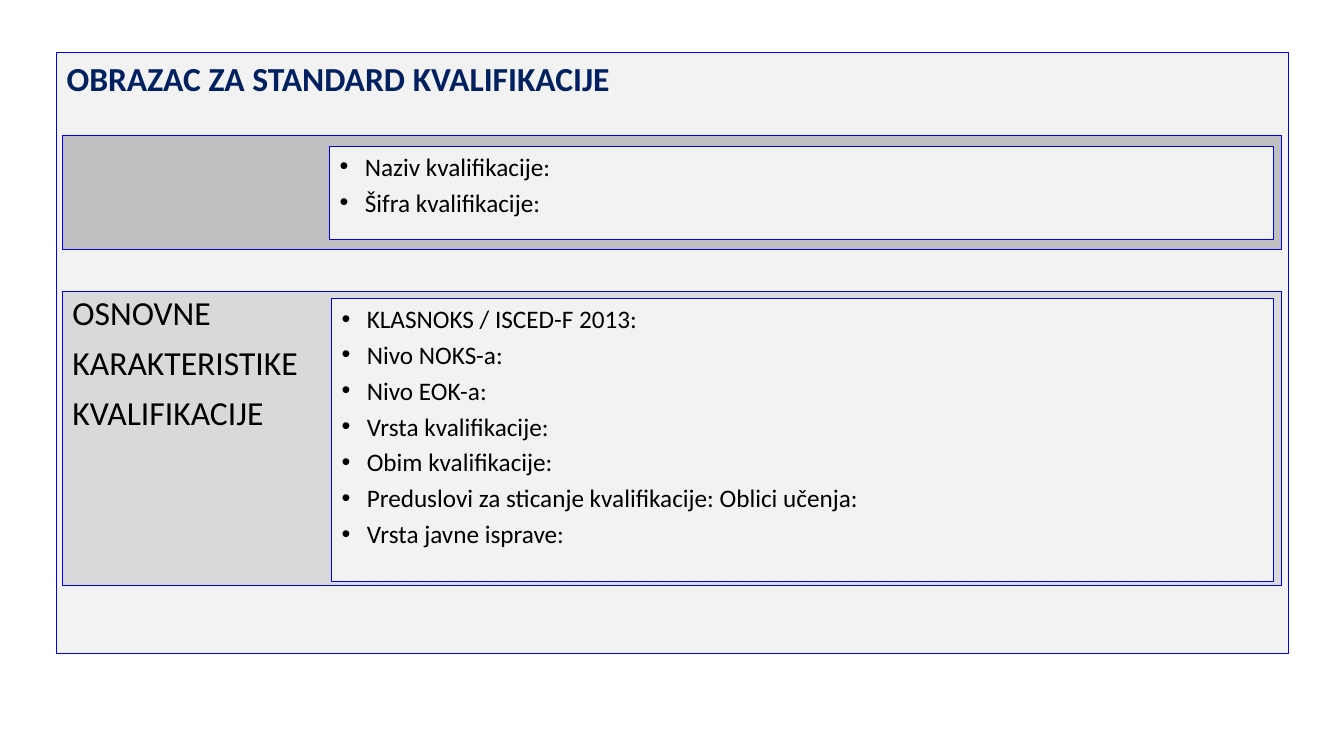
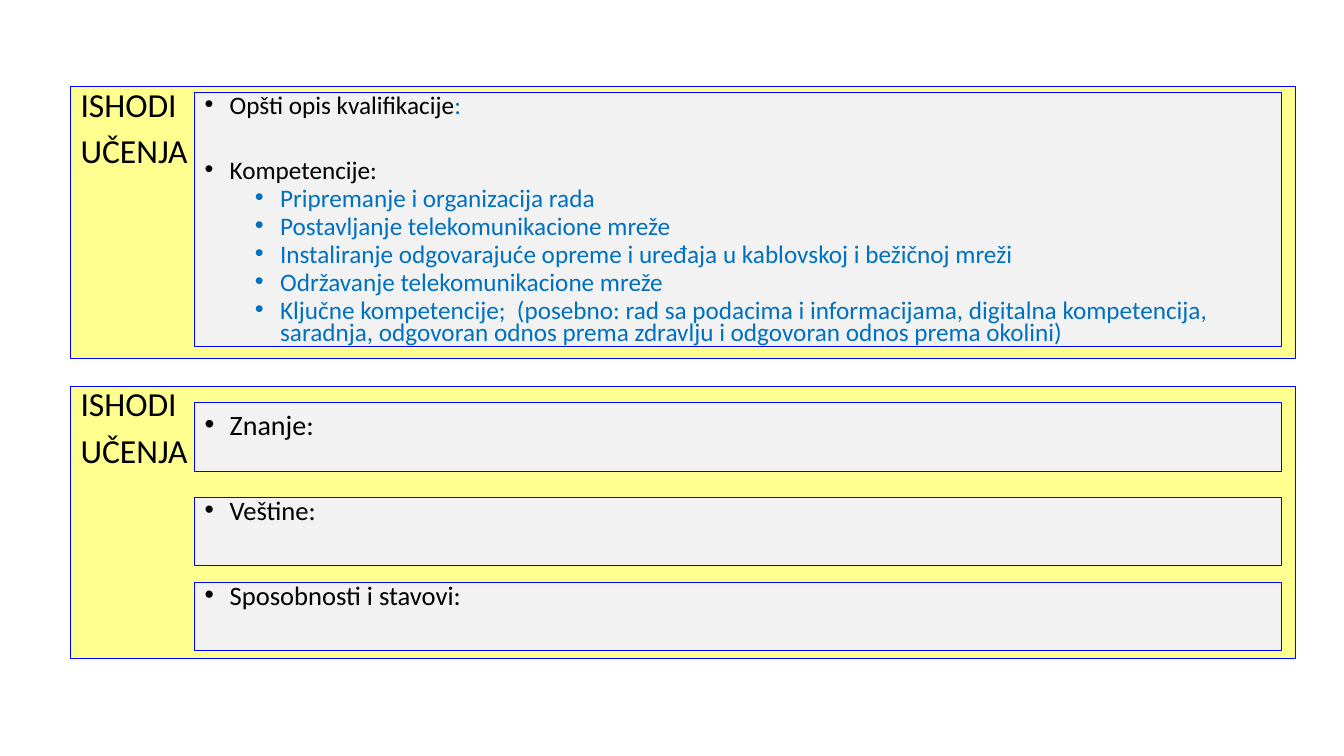
from dataclasses import dataclass
from lxml.etree import SubElement
from pptx import Presentation
from pptx.dml.color import RGBColor as RGB
from pptx.enum.shapes import MSO_SHAPE
from pptx.enum.text import MSO_ANCHOR, MSO_AUTO_SIZE, PP_ALIGN
from pptx.oxml.ns import qn
from pptx.util import Inches, Pt


@dataclass(frozen=True)
class Theme:
    font: str = "Calibri"
    heading: Pt = Pt(24)
    body: Pt = Pt(18)
    knowledge: Pt = Pt(20)
    skill: Pt = Pt(19)
    border_width: Pt = Pt(0.75)
    border: RGB = RGB(0x00, 0x00, 0xFF)
    title: RGB = RGB(0x00, 0x20, 0x60)
    text: RGB = RGB(0x00, 0x00, 0x00)
    answer: RGB = RGB(0x00, 0x70, 0xC0)
    paper: RGB = RGB(0xF2, 0xF2, 0xF2)
    name_band: RGB = RGB(0xBF, 0xBF, 0xBF)
    features_band: RGB = RGB(0xD9, 0xD9, 0xD9)
    outcomes_band: RGB = RGB(0xFF, 0xFF, 0x00)


theme = Theme()


def place_panel(slide, bounds, fill, panel=None, opacity=None):
    panel = panel or slide.shapes.add_shape(MSO_SHAPE.RECTANGLE, 0, 0, 0, 0)
    panel.left, panel.top, panel.width, panel.height = map(Inches, bounds)
    panel.shadow.inherit = False
    panel.fill.solid()
    panel.fill.fore_color.rgb = fill
    if opacity:
        color = panel.fill._xPr.find(".//" + qn("a:srgbClr"))
        SubElement(color, qn("a:alpha"), val=str(opacity * 1000))
    panel.line.color.rgb = theme.border
    panel.line.width = theme.border_width
    panel.text_frame.word_wrap = True
    panel.text_frame.auto_size = MSO_AUTO_SIZE.NONE
    panel.text_frame.vertical_anchor = MSO_ANCHOR.TOP
    return panel


def write(panel, lines, size, spacing=1.0, gap=10, color=theme.text, indent=None):
    frame = panel.text_frame
    for line in lines:
        is_first = not frame.text
        paragraph = frame.paragraphs[0] if is_first else frame.add_paragraph()
        paragraph.text = line
        paragraph.alignment = PP_ALIGN.LEFT
        paragraph.line_spacing = spacing
        paragraph.space_before = Pt(0 if is_first else gap)
        if indent:
            properties = paragraph._p.get_or_add_pPr()
            properties.set("marL", str(Inches(indent)))
            properties.set("indent", str(Inches(-0.25)))
            SubElement(properties, qn("a:buFont"), typeface="Arial")
            SubElement(properties, qn("a:buChar"), char="•")
        paragraph.font.name = theme.font
        paragraph.font.size = size
        paragraph.font.color.rgb = color
    return frame.paragraphs[-1]


prs = Presentation()
prs.slide_width = Inches(13.33)
prs.slide_height = Inches(7.5)

form = prs.slides.add_slide(prs.slide_layouts[5])
title = place_panel(form, (0.56, 0.52, 12.22, 5.96), theme.paper, form.shapes.title)
heading = write(title, ["OBRAZAC ZA STANDARD KVALIFIKACIJE"], theme.heading, color=theme.title)
heading.font.bold = True

place_panel(form, (0.62, 1.34, 12.09, 1.14), theme.name_band)
name_fields = place_panel(form, (3.27, 1.45, 9.36, 0.93), theme.paper)
write(name_fields, ["Naziv kvalifikacije:", "Šifra kvalifikacije:"], theme.body, gap=4, indent=0.25)

features = place_panel(form, (0.62, 2.89, 12.09, 2.92), theme.features_band)
write(features, ["OSNOVNE", "KARAKTERISTIKE", "KVALIFIKACIJE"], theme.heading, spacing=0.9)
feature_fields = place_panel(form, (3.29, 2.96, 9.34, 2.81), theme.paper)
write(feature_fields, [
    "KLASNOKS / ISCED-F 2013:",
    "Nivo NOKS-a:",
    "Nivo EOK-a:",
    "Vrsta kvalifikacije:",
    "Obim kvalifikacije:",
    "Preduslovi za sticanje kvalifikacije: Oblici učenja:",
    "Vrsta javne isprave:",
], theme.body, gap=4, indent=0.25)

outcomes = prs.slides.add_slide(prs.slide_layouts[6])
for top in (0.86, 3.83):
    band = place_panel(outcomes, (0.7, top, 12.15, 2.7), theme.outcomes_band, opacity=44)
    write(band, ["ISHODI", "UČENJA"], theme.heading, spacing=0.8)

competences = place_panel(outcomes, (1.93, 0.92, 10.78, 2.52), theme.paper)
description = write(competences, ["Opšti opis kvalifikacije"], theme.body, spacing=0.7, indent=0.25)
colon = description.add_run()
colon.text = ":"
colon.font.color.rgb = theme.answer
write(competences, ["Kompetencije:"], theme.body, spacing=0.7, gap=31, indent=0.25)
write(competences, [
    "Pripremanje i organizacija rada",
    "Postavljanje telekomunikacione mreže",
    "Instaliranje odgovarajuće opreme i uređaja u kablovskoj i bežičnoj mreži",
    "Održavanje telekomunikacione mreže",
    "Ključne kompetencije;  (posebno: rad sa podacima i informacijama, digitalna kompetencija, "
    "saradnja, odgovoran odnos prema zdravlju i odgovoran odnos prema okolini)",
], theme.body, spacing=0.7, gap=5, color=theme.answer, indent=0.75)

for label, top, height, size, spacing in (
    ("Znanje:", 3.99, 0.69, theme.knowledge, 1.0),
    ("Veštine:", 4.94, 0.67, theme.skill, 0.7),
    ("Sposobnosti i stavovi:", 5.78, 0.67, theme.skill, 0.7),
):
    outcome = place_panel(outcomes, (1.93, top, 10.78, height), theme.paper)
    write(outcome, [label], size, spacing=spacing, indent=0.25)

prs.save("out.pptx")
